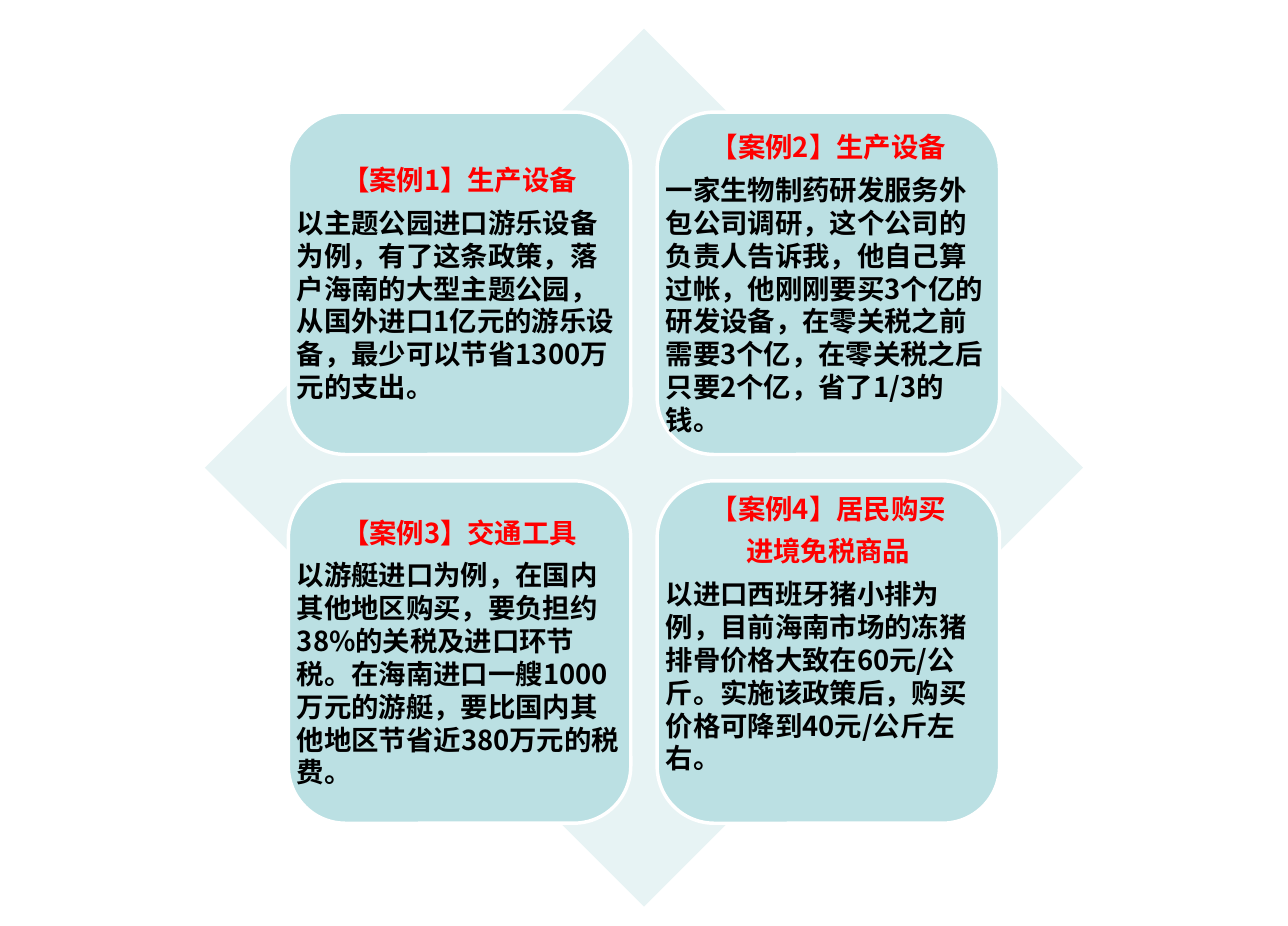
from lxml import etree
from pptx import Presentation
from pptx import util as u
from pptx.dml.color import RGBColor
from pptx.enum import lang, shapes, text
from pptx.oxml.ns import qn

FONT = "Noto Sans CJK SC"
CASES = [
    (["【案例1】生产设备"],
     "以主题公园进口游乐设备为例，有了这条政策，落户海南的大型主题公园，从国外进口1亿元的游乐设备，最少可以节省1300万元的支出。", 5),
    (["【案例2】生产设备"],
     "一家生物制药研发服务外包公司调研，这个公司的负责人告诉我，他自己算过帐，他刚刚要买3个亿的研发设备，在零关税之前需要3个亿，在零关税之后只要2个亿，省了1/3的钱。", 5),
    (["【案例3】交通工具"],
     "以游艇进口为例，在国内其他地区购买，要负担约38%的关税及进口环节税。在海南进口一艘1000万元的游艇，要比国内其他地区节省近380万元的税费。", 5),
    (["【案例4】居民购买", "进境免税商品"],
     "以进口西班牙猪小排为例，目前海南市场的冻猪排骨价格大致在60元/公斤。实施该政策后，购买价格可降到40元/公斤左右。", 27),
]


def color(value):
    """Turn a hex string into a colour."""
    return RGBColor.from_string(value)


def add_block(s, kind, box, fill, line=None):
    """Add a flat preset shape with an optional outline."""
    sp = s.shapes.add_shape(kind, *[u.Pt(v) for v in box])
    sp.shadow.inherit = False
    sp.fill.solid()
    sp.fill.fore_color.rgb = color(fill)
    if line:
        sp.line.color.rgb = color(line)
        sp.line.width = u.Pt(2)
    else:
        sp.line.fill.background()


def add_paragraph(p, content, align, ink):
    """Write one bold paragraph without hanging punctuation."""
    p.text = content
    p.alignment = align
    p.line_spacing = 1.0
    p.space_after = u.Pt(5.6)
    p._p.get_or_add_pPr().set("hangingPunct", "0")
    for r in p.runs:
        r.font.size = u.Pt(16)
        r.font.bold = True
        r.font.name = FONT
        r.font.color.rgb = color(ink)
        r.font.language_id = lang.MSO_LANGUAGE_ID.SIMPLIFIED_CHINESE
        etree.SubElement(r.font._element, qn("a:ea")).set("typeface", FONT)


def add_card(s, box, titles, body, bottom):
    """Place a rounded card with red titles and a body paragraph."""
    add_block(s, shapes.MSO_SHAPE.ROUNDED_RECTANGLE, box, "BBE0E3", "FFFFFF")
    tf = s.shapes.add_textbox(*[u.Pt(v) for v in box]).text_frame
    tf.word_wrap = True
    tf.vertical_anchor = text.MSO_ANCHOR.MIDDLE
    tf.margin_left = tf.margin_right = tf.margin_top = u.Pt(5)
    tf.margin_bottom = u.Pt(bottom)
    for i, title in enumerate(titles):
        p = tf.add_paragraph() if i else tf.paragraphs[0]
        add_paragraph(p, title, text.PP_ALIGN.CENTER, "FF0000")
    add_paragraph(tf.add_paragraph(), body, text.PP_ALIGN.LEFT, "000000")


def add_matrix(s, left, top, size):
    """Place the diamond and its two by two grid of case cards."""
    add_block(s, shapes.MSO_SHAPE.DIAMOND, (left, top, size, size), "E7F3F4")
    card, inset, pitch = size * 0.39, size * 0.095, size * 0.42
    for i, (titles, body, bottom) in enumerate(CASES):
        row, col = divmod(i, 2)
        box = (left + inset + col * pitch, top + inset + row * pitch, card, card)
        add_card(s, box, titles, body, bottom)


def main():
    """Build and save the slide."""
    prs = Presentation()
    prs.slide_width, prs.slide_height = u.Pt(751), u.Pt(540)
    s = prs.slides.add_slide(prs.slide_layouts[6])
    add_matrix(s, 119.5, 16.75, 512)
    prs.save("out.pptx")


if __name__ == "__main__":
    main()
